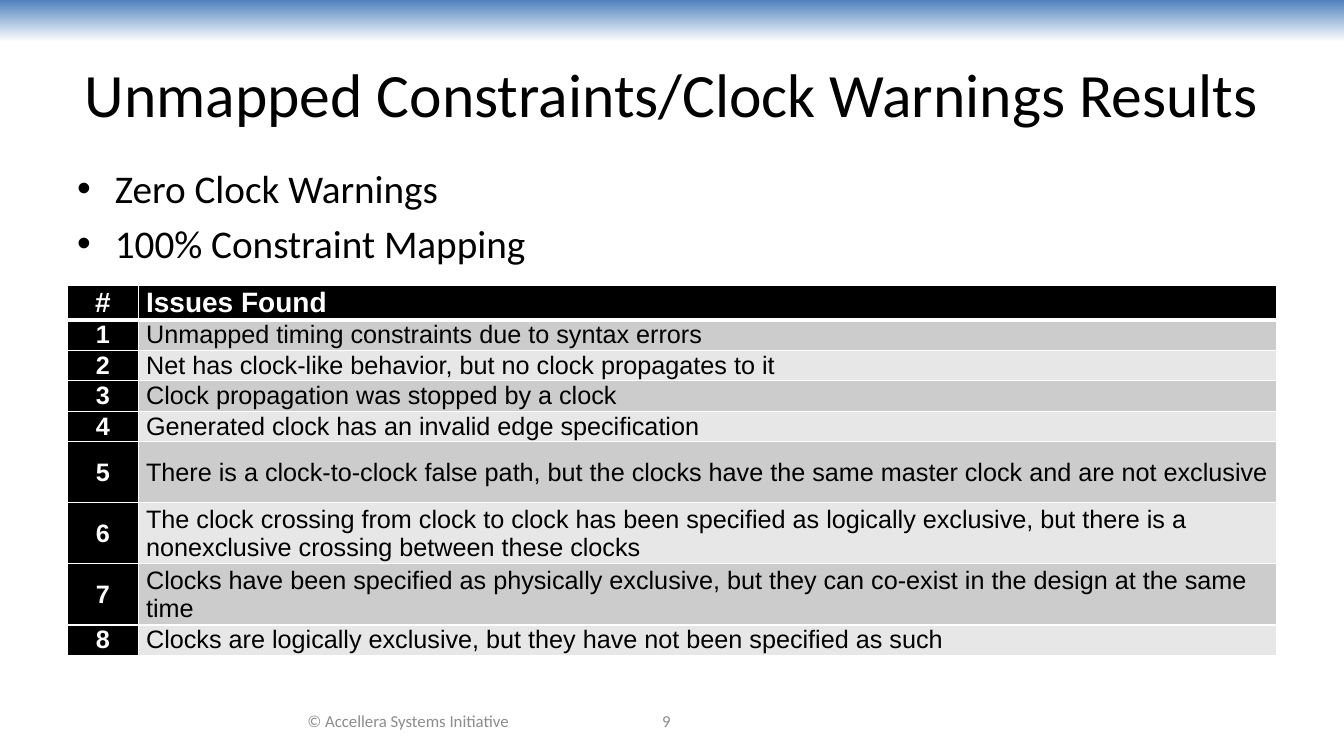
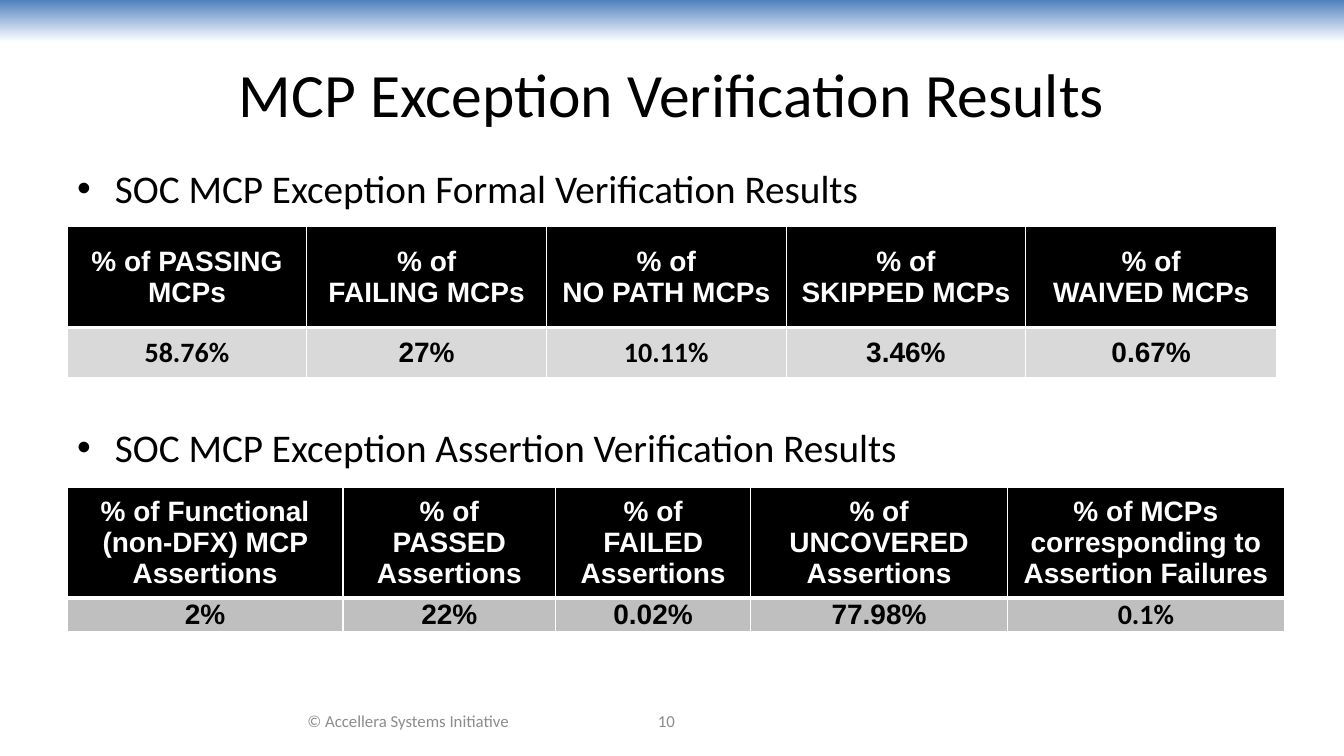
"""Build two results slides on clock constraint and exception verification."""
from dataclasses import dataclass, replace
from typing import NamedTuple

from lxml import etree
from pptx import Presentation
from pptx.dml.color import RGBColor
from pptx.enum import shapes, text
from pptx.oxml import ns
from pptx.util import Pt


class Box(NamedTuple):
    left: float
    top: float
    width: float
    height: float

    def lengths(self) -> list:
        return [Pt(v) for v in self]


@dataclass(frozen=True)
class Style:
    font: str
    size: float
    color: str
    bold: bool = False
    align: text.PP_ALIGN = text.PP_ALIGN.CENTER


@dataclass(frozen=True)
class Theme:
    band: str = "4F81BD"
    white: str = "FFFFFF"
    black: str = "000000"
    stripes: tuple = ("CCCCCC", "E7E7E7")
    formal: str = "D9D9D9"
    assertion: str = "BFBFBF"
    title: Style = Style("Calibri", 44, "000000")
    bullet: Style = Style("Calibri", 28, "000000", align=text.PP_ALIGN.LEFT)
    footer: Style = Style("Calibri", 12, "8C8C8C")
    head: Style = Style("Arial", 20, "FFFFFF", True)
    head_left: Style = Style("Arial", 20, "FFFFFF", True, text.PP_ALIGN.LEFT)
    number: Style = Style("Arial", 18, "FFFFFF", True)
    issue: Style = Style("Arial", 18, "000000", align=text.PP_ALIGN.LEFT)
    value: Style = Style("Arial", 20, "000000", True)


@dataclass(frozen=True)
class Cell:
    paragraphs: tuple
    style: Style
    fill: str


@dataclass(frozen=True)
class Grid:
    left: float
    top: float
    cols: list
    rows: list
    cells: list


T = Theme()
VALUE_ALT = replace(T.value, font="Calibri")
MARGIN, CONTENT_W = 48, 864
BAND = Box(0, 0, 960, 30)
TITLE = Box(MARGIN, 21.6, CONTENT_W, 90)
CREDIT = Box(175.7, 500.4, 231.8, 28.8)
PAGE = Box(383.8, 500.4, 184.3, 28.8)
BULLET_TOP, INDENT, BULLET_GAP = 114, 27, 5.6

ISSUES = [
    ("Unmapped timing constraints due to syntax errors", 1),
    ("Net has clock-like behavior, but no clock propagates to it", 1),
    ("Clock propagation was stopped by a clock", 1),
    ("Generated clock has an invalid edge specification", 1),
    ("There is a clock-to-clock false path, but the clocks have the same "
     "master clock and are not exclusive", 2),
    ("The clock crossing from clock to clock has been specified as logically "
     "exclusive, but there is a nonexclusive crossing between these clocks", 2),
    ("Clocks have been specified as physically exclusive, but they can "
     "co-exist in the design at the same time", 2),
    ("Clocks are logically exclusive, but they have not been specified as such", 1),
]
FORMAL = [
    (("% of PASSING MCPs",), "58.76%", VALUE_ALT),
    (("% of", "FAILING MCPs"), "27%", T.value),
    (("% of", "NO PATH MCPs"), "10.11%", VALUE_ALT),
    (("% of", "SKIPPED MCPs"), "3.46%", T.value),
    (("% of", "WAIVED MCPs"), "0.67%", T.value),
]
ASSERTION = [
    (("% of Functional (non-DFX) MCP Assertions",), "2%", T.value),
    (("% of\nPASSED Assertions",), "22%", T.value),
    (("% of\nFAILED Assertions",), "0.02%", T.value),
    (("% of\nUNCOVERED Assertions",), "77.98%", T.value),
    (("% of MCPs corresponding to Assertion Failures",), "0.1%", VALUE_ALT),
]


def rgb(color: str) -> RGBColor:
    return RGBColor.from_string(color)


def write(tf, paragraphs, style: Style) -> None:
    tf.word_wrap = True
    for i, content in enumerate(paragraphs):
        p = tf.add_paragraph() if i else tf.paragraphs[0]
        p.alignment = style.align
        for j, line in enumerate(content.split("\n")):
            if j:
                p.add_line_break()
            r = p.add_run()
            r.text = line
            r.font.name, r.font.size, r.font.bold = style.font, Pt(style.size), style.bold
            r.font.color.rgb = rgb(style.color)


def add_text(s, box: Box, paragraphs, style: Style, anchor=text.MSO_ANCHOR.MIDDLE):
    tf = s.shapes.add_textbox(*box.lengths()).text_frame
    tf.vertical_anchor = anchor
    write(tf, paragraphs, style)
    return tf


def add_bullets(s, top: float, height: float, items) -> None:
    tf = add_text(s, Box(MARGIN, top, CONTENT_W, height), items, T.bullet, text.MSO_ANCHOR.TOP)
    for i, p in enumerate(tf.paragraphs):
        p.space_before = Pt(BULLET_GAP if i else 0)
        props = p._p.get_or_add_pPr()
        props.set("marL", str(Pt(INDENT)))
        props.set("indent", str(-Pt(INDENT)))
        etree.SubElement(props, ns.qn("a:buFont"), typeface="Arial")
        etree.SubElement(props, ns.qn("a:buChar"), char="•")


def set_borders(cell, top: float, bottom: float) -> None:
    props = cell._tc.get_or_add_tcPr()
    for i, (side, width) in enumerate([("L", 1), ("R", 1), ("T", top), ("B", bottom)]):
        ln = etree.Element(ns.qn(f"a:ln{side}"), w=str(Pt(width)))
        fill = etree.SubElement(ln, ns.qn("a:solidFill"))
        etree.SubElement(fill, ns.qn("a:srgbClr"), val=T.white)
        props.insert(i, ln)


def add_grid(s, grid: Grid) -> None:
    box = Box(grid.left, grid.top, sum(grid.cols), sum(grid.rows))
    table = s.shapes.add_table(len(grid.rows), len(grid.cols), *box.lengths()).table
    table.horz_banding = False
    for col, width in zip(table.columns, grid.cols):
        col.width = Pt(width)
    for i, (row, height) in enumerate(zip(table.rows, grid.rows)):
        row.height = Pt(height)
        for cell, data in zip(row.cells, grid.cells[i]):
            cell.margin_left = cell.margin_right = Pt(5.4)
            cell.margin_top = cell.margin_bottom = Pt(0)
            cell.vertical_anchor = text.MSO_ANCHOR.MIDDLE
            cell.fill.solid()
            cell.fill.fore_color.rgb = rgb(data.fill)
            set_borders(cell, 3 if i == 1 else 1, 3 if i == 0 else 1)
            write(cell.text_frame, data.paragraphs, data.style)


def issue_grid() -> Grid:
    cells = [[Cell(("#",), T.head, T.black), Cell(("Issues Found",), T.head_left, T.black)]]
    for i, (issue, _) in enumerate(ISSUES):
        cells.append([Cell((str(i + 1),), T.number, T.black),
                      Cell((issue,), T.issue, T.stripes[i % 2])])
    rows = [24.4] + [21.8 * lines for _, lines in ISSUES]
    return Grid(MARGIN, 204, [51, 813], rows, cells)


def result_grid(top: float, cols, rows, results, fill: str) -> Grid:
    heads = [Cell(head, T.head, T.black) for head, _, _ in results]
    values = [Cell((value,), style, fill) for _, value, style in results]
    return Grid(MARGIN, top, cols, rows, [heads, values])


def add_slide(prs, title: str, page: int):
    s = prs.slides.add_slide(prs.slide_layouts[5])
    sp = s.shapes.add_shape(shapes.MSO_SHAPE.RECTANGLE, *BAND.lengths())
    sp.shadow.inherit = False
    sp.line.fill.background()
    sp.fill.gradient()
    sp.fill.gradient_angle = 270
    for stop, color in zip(sp.fill.gradient_stops, (T.band, T.white)):
        stop.color.rgb = rgb(color)
    heading = s.shapes.title
    heading.left, heading.top, heading.width, heading.height = TITLE.lengths()
    heading.text_frame.auto_size = text.MSO_AUTO_SIZE.NONE
    heading.text_frame.vertical_anchor = text.MSO_ANCHOR.MIDDLE
    write(heading.text_frame, [title], T.title)
    add_text(s, CREDIT, ["© Accellera Systems Initiative"], T.footer)
    add_text(s, PAGE, [str(page)], T.footer)
    return s


def main() -> None:
    prs = Presentation()
    prs.slide_width, prs.slide_height = Pt(960), Pt(540)

    s = add_slide(prs, "Unmapped Constraints/Clock Warnings Results", 9)
    add_bullets(s, BULLET_TOP, 84, ["Zero Clock Warnings", "100% Constraint Mapping"])
    add_grid(s, issue_grid())

    s = add_slide(prs, "MCP Exception Verification Results", 10)
    add_bullets(s, BULLET_TOP, 44, ["SOC MCP Exception Formal Verification Results"])
    add_grid(s, result_grid(162, [171.2] * 4 + [179.2], [72, 36], FORMAL, T.formal))
    add_bullets(s, 299, 44, ["SOC MCP Exception Assertion Verification Results"])
    add_grid(s, result_grid(348, [197, 152, 139.2, 183.6, 197.6], [79.2, 24],
                            ASSERTION, T.assertion))
    prs.save("out.pptx")


if __name__ == "__main__":
    main()
